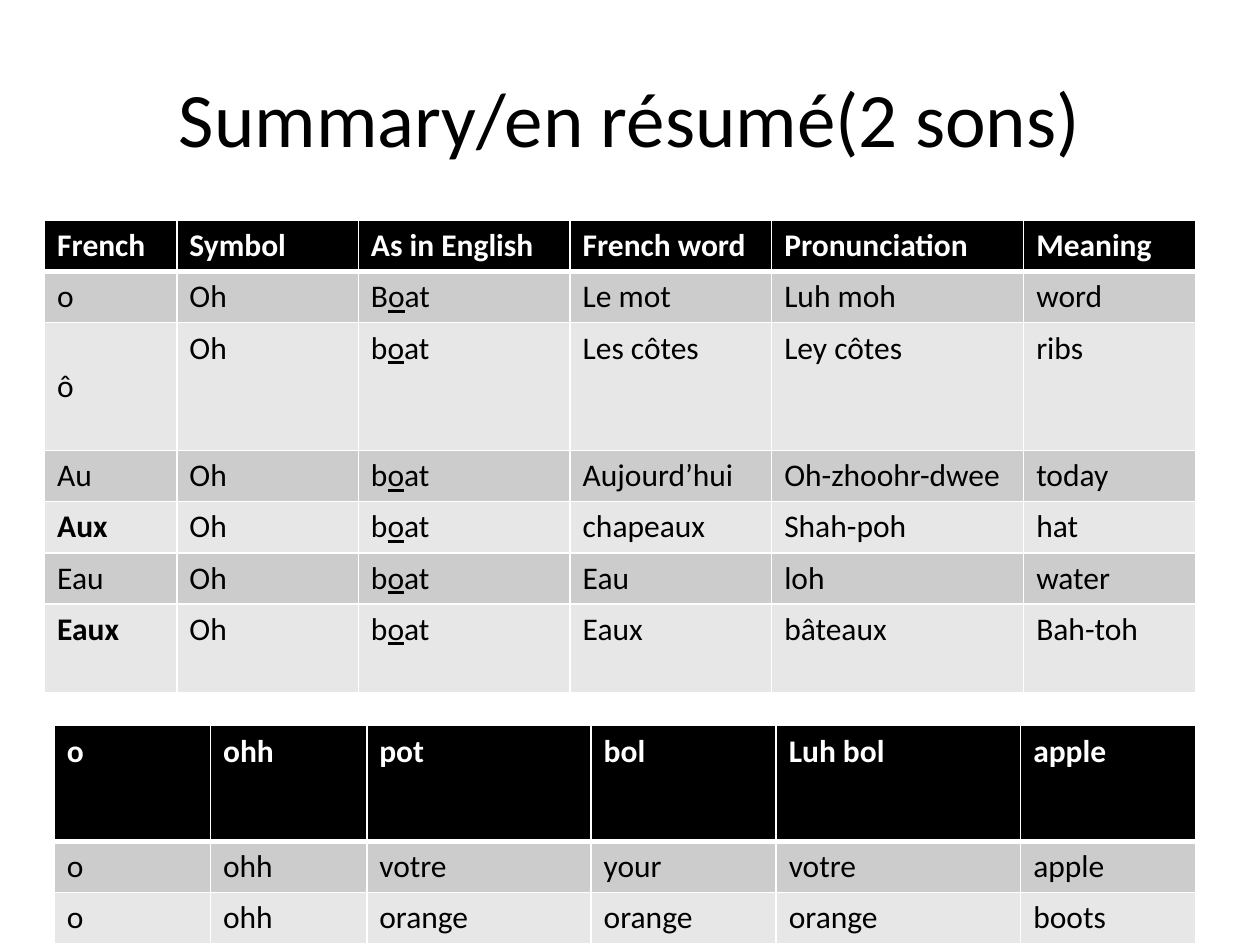
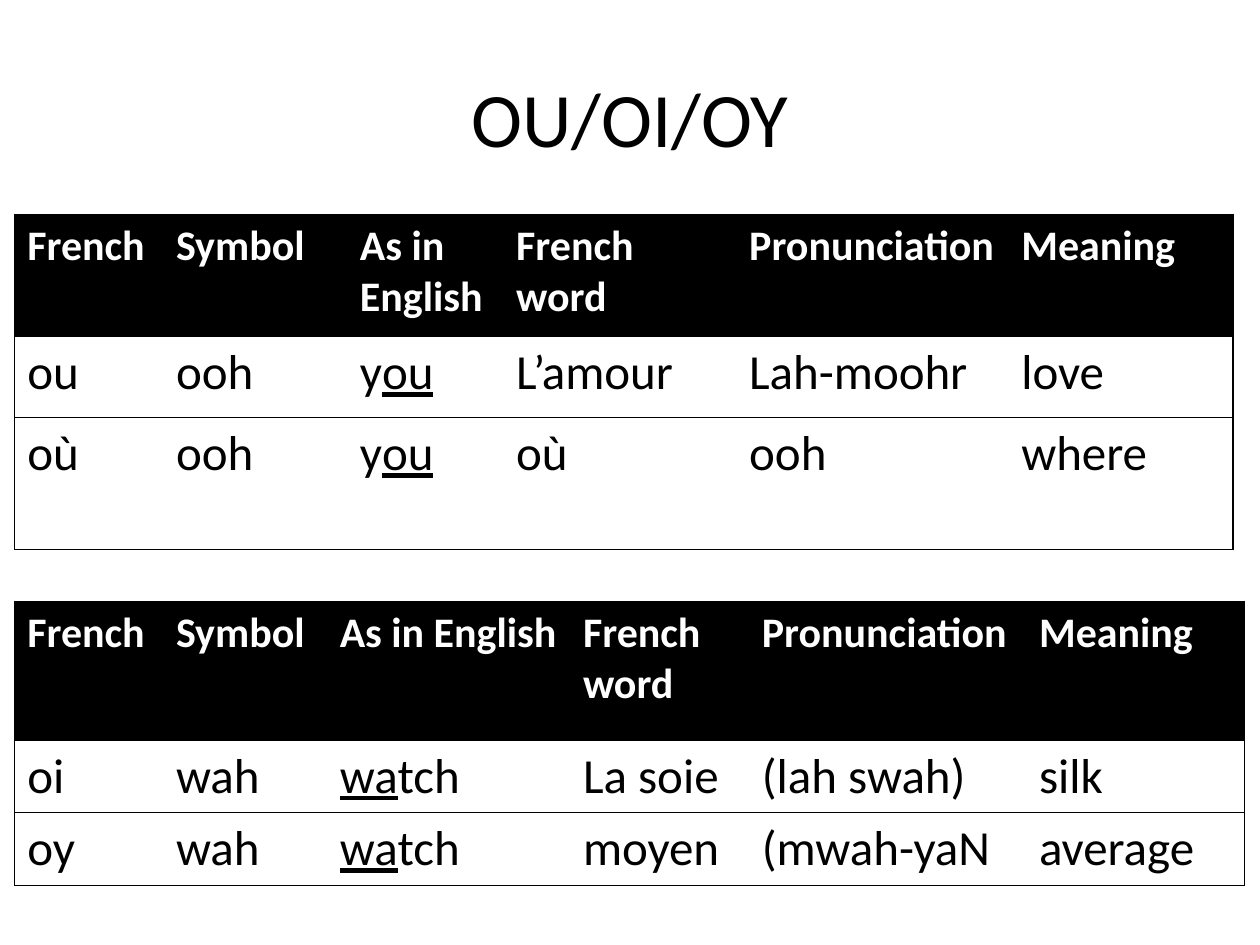
"""Build two slides of French vowel sounds, each with a title and two tables."""
import pptx
import pptx.dml.color
import pptx.enum.text
import pptx.oxml.ns
import pptx.util
from lxml import etree

Pt = pptx.util.Pt
RGB = pptx.dml.color.RGBColor.from_string
MIDDLE = pptx.enum.text.MSO_ANCHOR.MIDDLE
FONT = "Calibri"
COLOURS = {"ink": "000000", "paper": "FFFFFF", "dark_band": "CCCCCC", "light_band": "E7E7E7"}
HEADINGS = ["French", "Symbol", "As in English", "French word", "Pronunciation", "Meaning"]
BOLD_SPELLINGS = {"Aux", "Eaux"}

BANDED = {"header_size": 18, "body_size": 18, "banded": True}
RULED = {"header_size": 24, "body_size": 28, "banded": False}

# Underscores surround the underlined letters of a word.
SLIDES = [
    ("Summary/en résumé(2 sons)", BANDED, [
        {
            "left": 25.5, "top": 126,
            "widths": [75.6, 103.7, 121, 115.2, 144, 98.6],
            "heights": [29.2, 29.2, 73.1, 29.2, 29.2, 29.2, 50.9],
            "rows": [
                HEADINGS,
                ["o", "Oh", "B_o_at", "Le mot", "Luh moh", "word"],
                ["ô", "Oh", "b_o_at", "Les côtes", "Ley côtes", "ribs"],
                ["Au", "Oh", "b_o_at", "Aujourd’hui", "Oh-zhoohr-dwee", "today"],
                ["Aux", "Oh", "b_o_at", "chapeaux", "Shah-poh", "hat"],
                ["Eau", "Oh", "b_o_at", "Eau", "loh", "water"],
                ["Eaux", "Oh", "b_o_at", "Eaux", "bâteaux", "Bah-toh"],
            ],
        },
        {
            "left": 31, "top": 414.7,
            "widths": [89.3, 89.3, 128.2, 105.8, 139.7, 100.1],
            "heights": [66, 29.2, 29.2],
            "rows": [
                ["o", "ohh", "pot", "bol", "Luh bol", "apple"],
                ["o", "ohh", "votre", "your", "votre", "apple"],
                ["o", "ohh", "orange", "orange", "orange", "boots"],
            ],
        },
    ]),
    ("OU/OI/OY", RULED, [
        {
            "left": 8.4, "top": 122.4,
            "widths": [85, 105.1, 89.3, 133.2, 155.5, 128.2],
            "heights": [70, 46.2, 75.6],
            "rows": [
                HEADINGS,
                ["ou", "ooh", "y_ou_", "L’amour", "Lah-moohr", "love"],
                ["où", "ooh", "y_ou_", "où", "ooh", "where"],
            ],
        },
        {
            "left": 8.4, "top": 343.5,
            "widths": [85, 93.6, 139, 102.2, 158.4, 124.6],
            "heights": [79.4, 41.4, 41.4],
            "rows": [
                HEADINGS,
                ["oi", "wah", "_wa_tch", "La soie", "(lah swah)", "silk"],
                ["oy", "wah", "_wa_tch", "moyen", "(mwah-yaN", "average"],
            ],
        },
    ]),
]


def add_run(paragraph, text, size, colour, bold=False, underline=False):
    run = paragraph.add_run()
    run.text = text
    run.font.name = FONT
    run.font.size = Pt(size)
    run.font.color.rgb = RGB(COLOURS[colour])
    run.font.bold = bold
    run.font.underline = underline


def set_border(cell, side, colour, width):
    qn = pptx.oxml.ns.qn
    line = etree.SubElement(cell._tc.get_or_add_tcPr(), qn(f"a:ln{side}"), w=str(Pt(width)))
    if colour is None:
        etree.SubElement(line, qn("a:noFill"))
    else:
        fill = etree.SubElement(line, qn("a:solidFill"))
        etree.SubElement(fill, qn("a:srgbClr"), val=COLOURS[colour])


deck = pptx.Presentation()
deck.slide_width, deck.slide_height = Pt(720), Pt(540)

for heading, look, sound_tables in SLIDES:
    slide = deck.slides.add_slide(deck.slide_layouts[5])
    title = slide.shapes.title
    title.left, title.top, title.width, title.height = Pt(36), Pt(21.6), Pt(648), Pt(90)
    title.text_frame.vertical_anchor = MIDDLE
    title_line = title.text_frame.paragraphs[0]
    title_line.alignment = pptx.enum.text.PP_ALIGN.CENTER
    add_run(title_line, heading, 44, "ink")

    for sounds in sound_tables:
        rows, widths, heights = sounds["rows"], sounds["widths"], sounds["heights"]
        grid = slide.shapes.add_table(
            len(rows), len(widths), Pt(sounds["left"]), Pt(sounds["top"]),
            Pt(sum(widths)), Pt(sum(heights))).table
        grid.horz_banding = False
        grid.first_row = look["banded"]
        for column, width in zip(grid.columns, widths):
            column.width = Pt(width)

        for r, (words, height) in enumerate(zip(rows, heights)):
            grid.rows[r].height = Pt(height)
            is_header = r == 0
            for c, word in enumerate(words):
                cell = grid.cell(r, c)
                if look["banded"]:
                    for side in "LRT":
                        set_border(cell, side, "paper", 3 if side == "T" and r == 1 else 1)
                    set_border(cell, "B", "paper", 3 if is_header else 1)
                else:
                    set_border(cell, "L", "ink" if c == 0 else None, 0.75)
                    set_border(cell, "R", "ink" if c == len(words) - 1 else None, 0.75)
                    set_border(cell, "T", "ink", 0.75)
                    set_border(cell, "B", "ink", 0.75)

                if is_header or look["banded"]:
                    band = "ink" if is_header else "dark_band" if r % 2 else "light_band"
                    cell.fill.solid()
                    cell.fill.fore_color.rgb = RGB(COLOURS[band])
                else:
                    cell.fill.background()

                if word == "ô":
                    cell.vertical_anchor = MIDDLE
                size = look["header_size" if is_header else "body_size"]
                colour = "paper" if is_header else "ink"
                bold = is_header or (c == 0 and word in BOLD_SPELLINGS)
                for part, letters in enumerate(word.split("_")):
                    if letters:
                        add_run(cell.text_frame.paragraphs[0], letters, size, colour,
                                bold, underline=part % 2 == 1)

deck.save("out.pptx")
